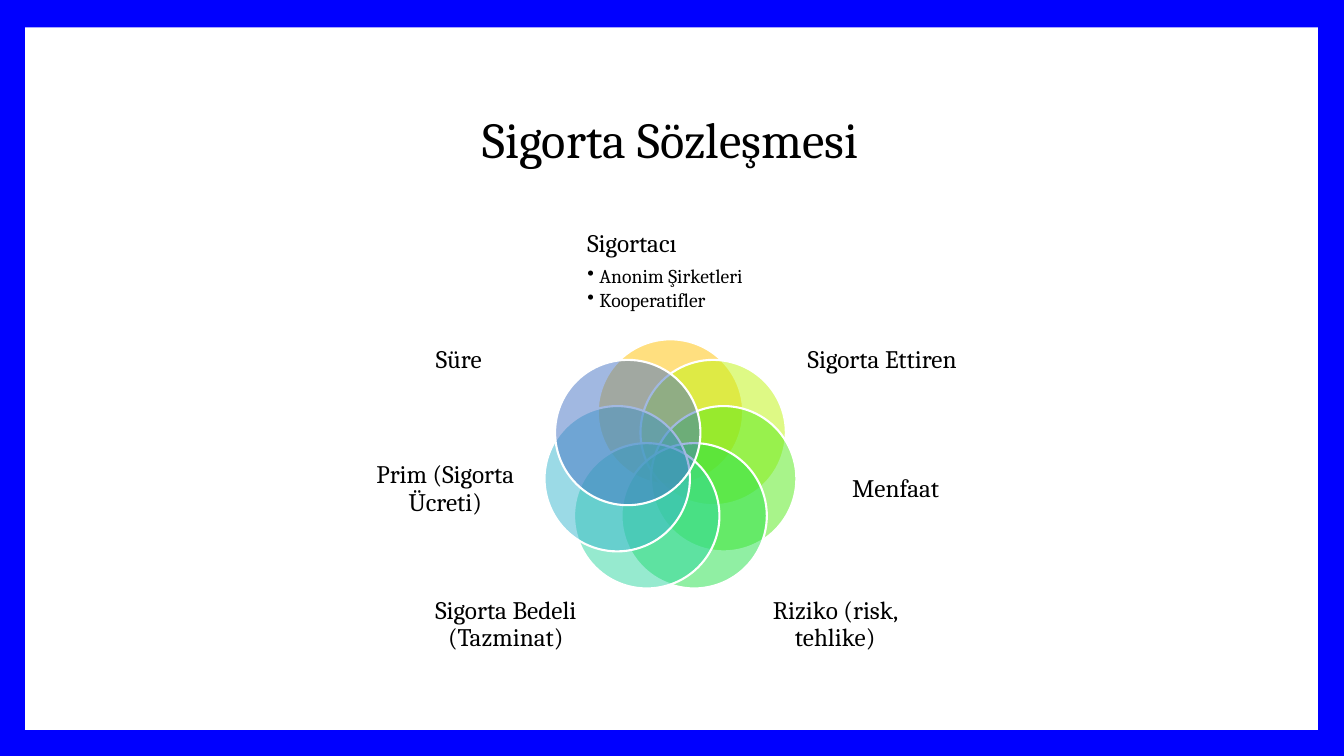
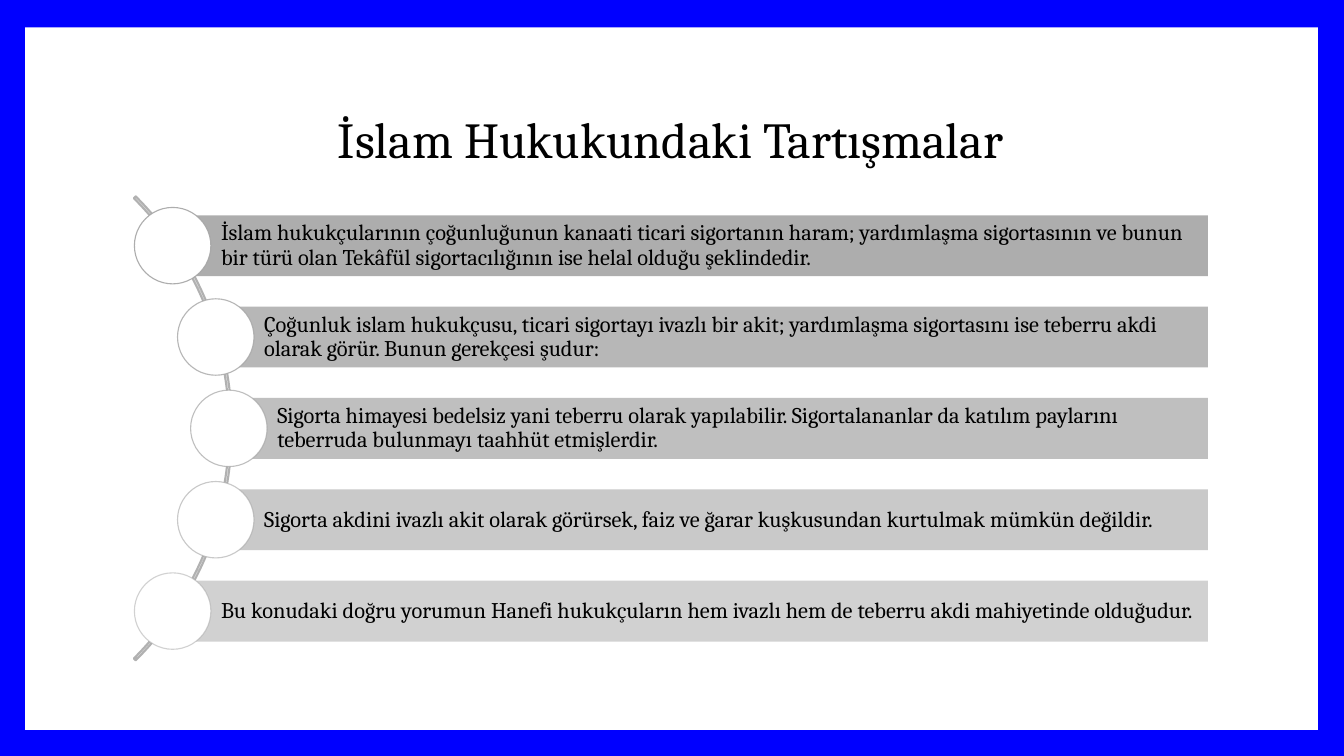
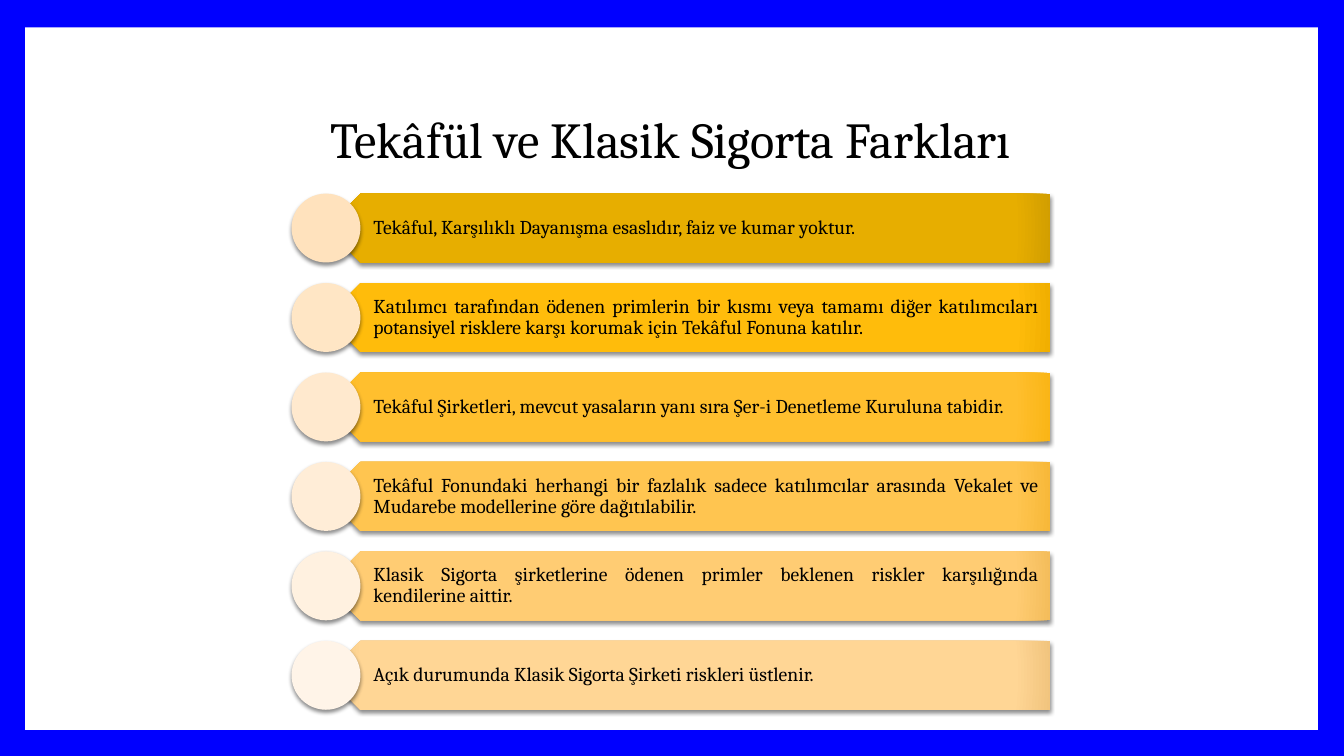
"""Build three slides on insurance contracts and takaful."""
from dataclasses import dataclass
from math import cos, pi, sin, sqrt

from lxml import etree
from pptx import Presentation
from pptx.dml.color import RGBColor
from pptx.enum.shapes import MSO_SHAPE
from pptx.enum.text import MSO_ANCHOR, PP_ALIGN
from pptx.oxml import parse_xml
from pptx.oxml.ns import nsdecls, qn
from pptx.util import Inches, Pt

RECTANGLE, ELLIPSE = MSO_SHAPE.RECTANGLE, MSO_SHAPE.OVAL
BLOCK_ARC, PENTAGON = MSO_SHAPE.BLOCK_ARC, MSO_SHAPE.PENTAGON
LEFT, CENTER, JUSTIFY = PP_ALIGN.LEFT, PP_ALIGN.CENTER, PP_ALIGN.JUSTIFY
MIDDLE = MSO_ANCHOR.MIDDLE

FONT = "Cambria"
BLUE = RGBColor(0x00, 0x00, 0xFF)
WHITE = RGBColor(0xFF, 0xFF, 0xFF)
BLACK = RGBColor(0x00, 0x00, 0x00)
GRAY = RGBColor(0xA5, 0xA5, 0xA5)
ARC_GRAY = RGBColor(0xB1, 0xB1, 0xB1)
PETAL_COLORS = [
    RGBColor(0xFF, 0xC0, 0x00), RGBColor(0xBE, 0xF5, 0x0C),
    RGBColor(0x53, 0xEB, 0x17), RGBColor(0x23, 0xE1, 0x48),
    RGBColor(0x2E, 0xD7, 0xA1), RGBColor(0x39, 0xB6, 0xCE),
    RGBColor(0x44, 0x72, 0xC4),
]
PLATE_COLORS = [
    (RGBColor(0xE7, 0xAE, 0x00), RGBColor(0xD2, 0x9E, 0x00)),
    (RGBColor(0xFF, 0xBC, 0x0B), RGBColor(0xF1, 0xAF, 0x00)),
    (RGBColor(0xFF, 0xBF, 0x2E), RGBColor(0xFA, 0xB5, 0x16)),
    (RGBColor(0xFF, 0xC5, 0x50), RGBColor(0xF7, 0xB8, 0x39)),
    (RGBColor(0xFF, 0xCC, 0x73), RGBColor(0xF4, 0xBD, 0x5B)),
    (RGBColor(0xFF, 0xD6, 0x95), RGBColor(0xF1, 0xC4, 0x7E)),
]
BEAD_COLORS = [
    RGBColor(0xFF, 0xE2, 0xBD), RGBColor(0xFF, 0xE6, 0xC5),
    RGBColor(0xFF, 0xE9, 0xCE), RGBColor(0xFF, 0xED, 0xD7),
    RGBColor(0xFF, 0xF1, 0xE0), RGBColor(0xFF, 0xF4, 0xE8),
]

SLIDE_WIDTH, SLIDE_HEIGHT = Inches(13.33), Inches(7.5)
CELL = SLIDE_HEIGHT / 90


@dataclass
class Box:
    """A rectangle in cells of the 160 by 90 slide grid."""
    left: float
    top: float
    width: float
    height: float

    @property
    def right(self):
        """Return the right edge."""
        return self.left + self.width

    @property
    def middle(self):
        """Return the vertical centre."""
        return self.top + self.height / 2

    def lengths(self):
        """Return the rectangle in slide units."""
        return [round(value * CELL) for value in
                (self.left, self.top, self.width, self.height)]


PANEL = Box(3, 3.25, 153.85, 83.65)
TITLE = Box(15, 8, 129.6, 17.75)
FLOWER = Box(43.8, 27, 72, 53)
CURVED_LIST = Box(16, 24.7, 127.75, 52.6)
PLATE_LIST = Box(34.7, 23.05, 90.25, 61.45)
NO_INSETS = (0, 0, 0, 0)
TITLE_INSETS = (1.2, 0.6, 1.2, 0.6)

SIDE_LABELS = [
    (25.2, 10.1, 18.7, 11.65, "Sigorta Ettiren", "Süre"),
    (26.8, 25, 18.35, 12.5, "Menfaat", "Prim (Sigorta Ücreti)"),
    (19.6, 41.65, 19.8, 11.4, "Riziko (risk, tehlike)",
     "Sigorta Bedeli (Tazminat)"),
]
DEBATES = [
    "İslam hukukçularının çoğunluğunun kanaati ticari sigortanın haram; "
    "yardımlaşma sigortasının ve bunun bir türü olan Tekâfül "
    "sigortacılığının ise helal olduğu şeklindedir.",
    "Çoğunluk islam hukukçusu, ticari sigortayı ivazlı bir akit; yardımlaşma "
    "sigortasını ise teberru akdi olarak görür. Bunun gerekçesi şudur:",
    "Sigorta himayesi bedelsiz yani teberru olarak yapılabilir. "
    "Sigortalananlar da katılım paylarını teberruda bulunmayı taahhüt "
    "etmişlerdir.",
    "Sigorta akdini ivazlı akit olarak görürsek, faiz ve ğarar kuşkusundan "
    "kurtulmak mümkün değildir.",
    "Bu konudaki doğru yorumun Hanefi hukukçuların hem ivazlı hem de teberru "
    "akdi mahiyetinde olduğudur.",
]
DIFFERENCES = [
    "Tekâful, Karşılıklı Dayanışma esaslıdır, faiz ve kumar yoktur.",
    "Katılımcı tarafından ödenen primlerin bir kısmı veya tamamı diğer "
    "katılımcıları potansiyel risklere karşı korumak için Tekâful Fonuna "
    "katılır.",
    "Tekâful Şirketleri, mevcut yasaların yanı sıra Şer-i Denetleme Kuruluna "
    "tabidir.",
    "Tekâful Fonundaki herhangi bir fazlalık sadece katılımcılar arasında "
    "Vekalet ve Mudarebe modellerine göre dağıtılabilir.",
    "Klasik Sigorta şirketlerine ödenen primler beklenen riskler "
    "karşılığında kendilerine aittir.",
    "Açık durumunda Klasik Sigorta Şirketi riskleri üstlenir.",
]


def set_alpha(element, percent):
    """Set the opacity of the colours inside an element."""
    for color in element.iter(qn("a:srgbClr")):
        etree.SubElement(color, qn("a:alpha")).set("val", str(percent * 1000))


def add_figure(slide, kind, box, fill=None, line=None, line_width=1.5):
    """Add a preset shape without theme effects."""
    shape = slide.shapes.add_shape(kind, *box.lengths())
    shape.shadow.inherit = False
    if fill is None:
        shape.fill.background()
    else:
        shape.fill.solid()
        shape.fill.fore_color.rgb = fill
    if line is None:
        shape.line.fill.background()
    else:
        shape.line.color.rgb = line
        shape.line.width = Pt(line_width)
    return shape


def style_paragraph(paragraph, text, size, alignment, space_share=0.35):
    """Write one paragraph in the common font."""
    paragraph.text = text
    paragraph.alignment = alignment
    paragraph.line_spacing = 0.9
    paragraph.space_after = Pt(size * space_share)
    paragraph.font.name = FONT
    paragraph.font.size = Pt(size)
    paragraph.font.color.rgb = BLACK


def write_text(shape, text, size, alignment, insets):
    """Fill a shape with wrapped, vertically centred text."""
    frame = shape.text_frame
    frame.word_wrap = True
    frame.vertical_anchor = MIDDLE
    (frame.margin_left, frame.margin_top, frame.margin_right,
     frame.margin_bottom) = [round(inset * CELL) for inset in insets]
    style_paragraph(frame.paragraphs[0], text, size, alignment)
    return frame


def add_text(slide, box, text, size, alignment, insets=NO_INSETS):
    """Add a text box and return its frame."""
    text_box = slide.shapes.add_textbox(*box.lengths())
    return write_text(text_box, text, size, alignment, insets)


def add_bullet(frame, text):
    """Append a bulleted paragraph."""
    paragraph = frame.add_paragraph()
    style_paragraph(paragraph, text, 14, LEFT, 0.15)
    paragraph.level = 1
    properties = paragraph._p.get_or_add_pPr()
    properties.set("marL", str(Inches(0.12)))
    properties.set("indent", str(-Inches(0.12)))
    bullet = parse_xml(f'<a:buChar {nsdecls("a")} char="•"/>')
    properties.find(qn("a:spcAft")).addnext(bullet)


def add_soft_shadow(shape):
    """Give a shape a short shadow below it."""
    effects = shape._element.spPr.find(qn("a:effectLst"))
    effects.append(parse_xml(
        f'<a:outerShdw {nsdecls("a")} blurRad="{Pt(3)}" dist="{Pt(2)}" '
        f'dir="5400000" rotWithShape="0"><a:srgbClr val="{BLACK}">'
        '<a:alpha val="45000"/></a:srgbClr></a:outerShdw>'))


def set_corner_gradient(shape, base, edge):
    """Fill a shape with a circular gradient towards one corner."""
    stops = "".join(
        f'<a:gs pos="{position * 1000}"><a:srgbClr val="{color}"/></a:gs>'
        for position, color in ((0, base), (90, base), (100, edge)))
    gradient = parse_xml(
        f'<a:gradFill {nsdecls("a")} rotWithShape="1"><a:gsLst>{stops}</a:gsLst>'
        '<a:path path="circle"><a:fillToRect l="100000" t="100000" '
        'r="100000" b="100000"/></a:path></a:gradFill>')
    properties = shape._element.spPr
    properties.replace(properties.find(qn("a:noFill")), gradient)


def add_titled_slide(presentation, title):
    """Add a slide with the blue frame, white panel and title."""
    slide = presentation.slides.add_slide(presentation.slide_layouts[6])
    slide.background.fill.solid()
    slide.background.fill.fore_color.rgb = BLUE
    add_figure(slide, RECTANGLE, PANEL, WHITE)
    add_text(slide, TITLE, title, 36, CENTER, TITLE_INSETS)
    return slide


def add_flower(slide, box):
    """Draw overlapping petals in a ring with labels around them."""
    diameter, orbit = 17.3, 6.5
    center_x, center_y = box.left + box.width / 2, box.top + 28.55
    for index, color in enumerate(PETAL_COLORS):
        angle = 2 * pi * index / len(PETAL_COLORS)
        petal_box = Box(center_x + orbit * sin(angle) - diameter / 2,
                        center_y - orbit * cos(angle) - diameter / 2,
                        diameter, diameter)
        petal = add_figure(slide, ELLIPSE, petal_box, color, WHITE)
        set_alpha(petal._element.spPr.find(qn("a:solidFill")), 50)

    top_label = Box(center_x - 9.9, box.top, 19.8, 10.55)
    frame = add_text(slide, top_label, "Sigortacı", 18, LEFT)
    for text in ("Anonim Şirketleri", "Kooperatifler"):
        add_bullet(frame, text)
    for offset, top, width, height, right_text, left_text in SIDE_LABELS:
        for side, text in ((1, right_text), (-1, left_text)):
            label = Box(center_x + side * offset - width / 2, box.top + top,
                        width, height)
            add_text(slide, label, text, 18, CENTER)


def add_curved_list(slide, box, texts):
    """Draw bars that start at rings placed along an arc."""
    ring_size, bar_height, orbit, arc_size = 9.1, 7.25, 38.7, 78.1
    pitch = (box.height - ring_size) / (len(texts) - 1)
    reach = (box.height - ring_size) / 2
    arc_x = box.left + ring_size / 2 - sqrt(orbit ** 2 - reach ** 2)
    arc_box = Box(arc_x - arc_size / 2, box.middle - arc_size / 2,
                  arc_size, arc_size)
    arc = add_figure(slide, BLOCK_ARC, arc_box, line=ARC_GRAY)
    for index, value in enumerate((189, 27, 0.004)):
        arc.adjustments[index] = value

    for index, text in enumerate(texts):
        opacity = 90 - 10 * index
        rise = index * pitch - reach
        x, y = arc_x + sqrt(orbit ** 2 - rise ** 2), box.middle + rise
        bar_box = Box(x, y - bar_height / 2, box.right - x, bar_height)
        bar = add_figure(slide, RECTANGLE, bar_box, GRAY)
        set_alpha(bar._element.spPr.find(qn("a:solidFill")), opacity)
        write_text(bar, text, 16, LEFT, (5.76, 0.48, 0.48, 0.48))
        ring_box = Box(x - ring_size / 2, y - ring_size / 2,
                       ring_size, ring_size)
        ring = add_figure(slide, ELLIPSE, ring_box, WHITE, GRAY, 0.79)
        set_alpha(ring._element.spPr.find(qn("a:ln")), opacity)


def add_plate_list(slide, box, texts):
    """Draw a column of pointed plates, each with a bead at its tip."""
    size = 8.2
    pitch = (box.height - size) / (len(texts) - 1)
    rows = zip(texts, PLATE_COLORS, BEAD_COLORS)
    for index, (text, plate_colors, bead_color) in enumerate(rows):
        top = box.top + index * pitch
        plate_box = Box(box.left + size / 2, top, box.width - size / 2, size)
        plate = add_figure(slide, PENTAGON, plate_box)
        plate.rotation = 180
        set_corner_gradient(plate, *plate_colors)
        add_soft_shadow(plate)
        text_box = Box(box.left + size * 0.75, top,
                       box.width - size * 0.75, size)
        add_text(slide, text_box, text, 14, JUSTIFY, (3.6, 0.7, 1.3, 0.7))
        bead_box = Box(box.left, top, size, size)
        add_soft_shadow(add_figure(slide, ELLIPSE, bead_box, bead_color))


def main():
    """Build and save the presentation."""
    presentation = Presentation()
    presentation.slide_width = SLIDE_WIDTH
    presentation.slide_height = SLIDE_HEIGHT
    slide = add_titled_slide(presentation, "Sigorta Sözleşmesi")
    add_flower(slide, FLOWER)
    slide = add_titled_slide(presentation, "İslam Hukukundaki Tartışmalar")
    add_curved_list(slide, CURVED_LIST, DEBATES)
    slide = add_titled_slide(presentation, "Tekâfül ve Klasik Sigorta Farkları")
    add_plate_list(slide, PLATE_LIST, DIFFERENCES)
    presentation.save("out.pptx")


if __name__ == "__main__":
    main()
